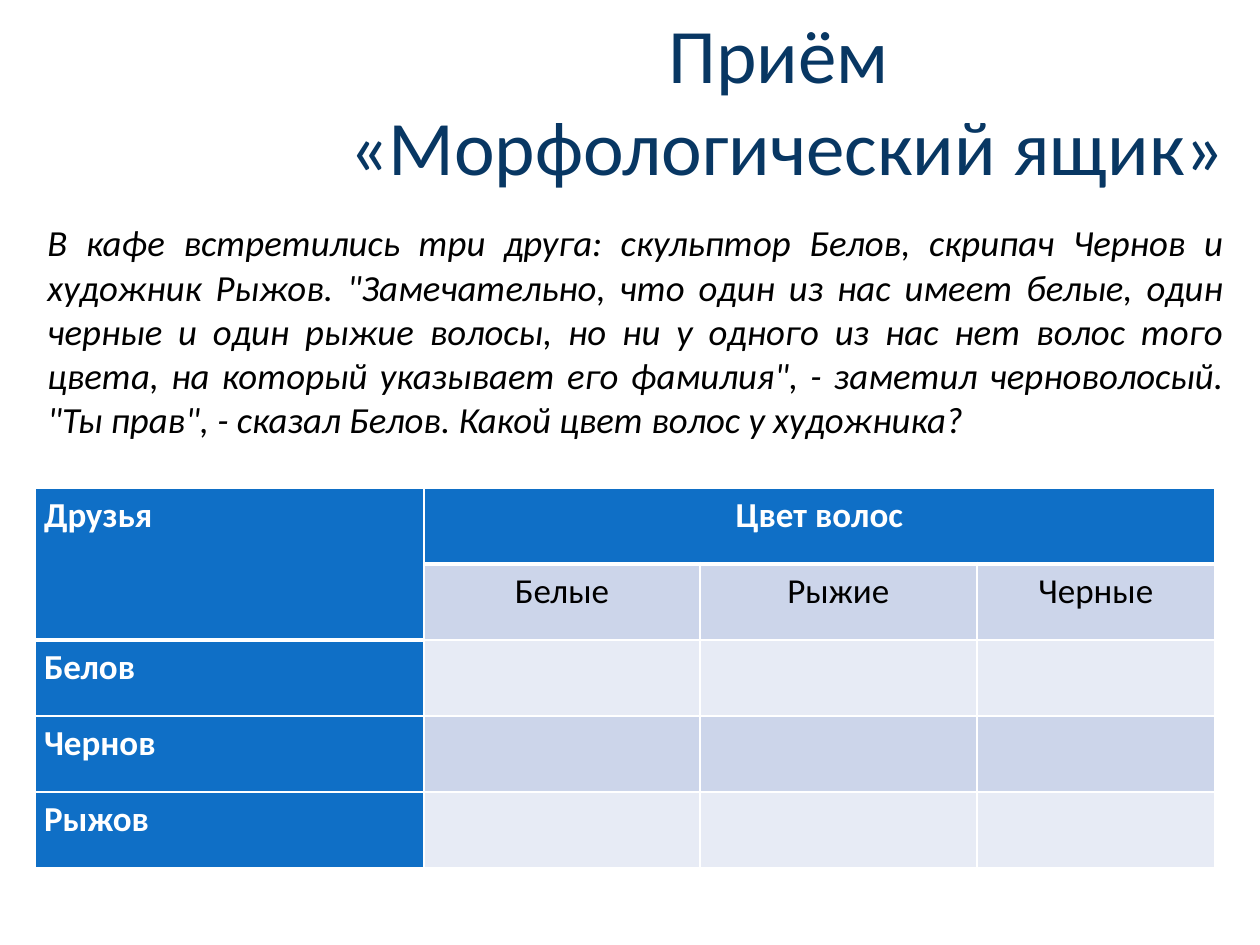
import pptx
import pptx.dml.color
import pptx.enum.text
import pptx.oxml
import pptx.oxml.ns
import pptx.util

ALIGN = pptx.enum.text.PP_ALIGN
WHITE, BLACK, NAVY, BLUE = "FFFFFF", "000000", "083763", "0F6FC6"
BANDS = ("E7EBF5", "CCD5EA")


def px(n):
    return pptx.util.Emu(round(n * 914400 / 126))


def rgb(value):
    return pptx.dml.color.RGBColor.from_string(value)


class Deck:
    font = "Calibri"

    def __init__(self, width, height):
        self.prs = pptx.Presentation()
        self.prs.slide_width, self.prs.slide_height = px(width), px(height)

    def add_slide(self):
        self.s = self.prs.slides.add_slide(self.prs.slide_layouts[5])

    def style(self, p, size, color, align, bold=False, italic=False):
        p.alignment = align
        p.font.name, p.font.size = self.font, pptx.util.Pt(size)
        p.font.bold, p.font.italic = bold, italic
        p.font.color.rgb = rgb(color)

    def title(self, lines, x, y, w, h):
        sp = self.s.shapes.title
        sp.left, sp.top, sp.width, sp.height = px(x), px(y), px(w), px(h)
        tf = sp.text_frame
        tf.text = "\n".join(lines)
        tf.word_wrap = False
        tf.auto_size = pptx.enum.text.MSO_AUTO_SIZE.SHAPE_TO_FIT_TEXT
        tf.vertical_anchor = pptx.enum.text.MSO_ANCHOR.MIDDLE
        for p in tf.paragraphs:
            self.style(p, 44, NAVY, ALIGN.CENTER)

    def text(self, text, x, y, w, h):
        tf = self.s.shapes.add_textbox(px(x), px(y), px(w), px(h)).text_frame
        tf.word_wrap = True
        tf.auto_size = pptx.enum.text.MSO_AUTO_SIZE.SHAPE_TO_FIT_TEXT
        tf.text = text
        self.style(tf.paragraphs[0], 21, BLACK, ALIGN.JUSTIFY, italic=True)

    def border(self, cell, side, points):
        ln = pptx.oxml.parse_xml(
            f'<a:{side} {pptx.oxml.ns.nsdecls("a")} w="{points * 12700}">'
            f'<a:solidFill><a:srgbClr val="{WHITE}"/></a:solidFill></a:{side}>')
        cell._tc.get_or_add_tcPr().append(ln)

    def cell(self, cell, text, fill, bold, align, top, bottom):
        for side, points in (("lnL", 1), ("lnR", 1), ("lnT", top), ("lnB", bottom)):
            self.border(cell, side, points)
        cell.fill.solid()
        cell.fill.fore_color.rgb = rgb(fill)
        cell.margin_left = cell.margin_right = px(9)
        cell.margin_top = cell.margin_bottom = 0
        if text:
            cell.text = text
            p = cell.text_frame.paragraphs[0]
            p.line_spacing, p.space_after = 1.15, pptx.util.Pt(8)
            self.style(p, 20, WHITE if bold else BLACK, align, bold)

    def table(self, rows, x, y, widths, row_height):
        frame = self.s.shapes.add_table(
            len(rows), len(widths), px(x), px(y),
            px(sum(widths)), px(row_height * len(rows)))
        table = frame.table
        table.first_col = True
        for column, width in zip(table.columns, widths):
            column.width = px(width)
        for r, row in enumerate(rows):
            table.rows[r].height = px(row_height)
            for c, text in enumerate(row):
                heading = r == 0 or c == 0
                header_end = 1 if c == 0 else 0
                self.cell(
                    table.cell(r, c), text,
                    BLUE if heading else BANDS[r % 2], heading,
                    ALIGN.LEFT if c == 0 else ALIGN.CENTER,
                    top=3 if r == header_end + 1 else 1,
                    bottom=3 if r == header_end else 1)
        table.cell(0, 0).merge(table.cell(1, 0))
        table.cell(0, 1).merge(table.cell(0, len(widths) - 1))


def main():
    deck = Deck(1260, 945)
    deck.add_slide()
    deck.table(
        [["Друзья", "Цвет волос", "", ""],
         ["", "Белые", "Рыжие", "Черные"]]
        + [[name, "", "", ""] for name in ("Белов", "Чернов", "Рыжов")],
        35, 488, [389, 276, 277, 238], 76)
    deck.title(["Приём ", "«Морфологический ящик»"], 317, -1, 941, 199)
    deck.text(
        "В кафе встретились три друга: скульптор Белов, скрипач Чернов и "
        "художник Рыжов. \"Замечательно, что один из нас имеет белые, один "
        "черные и один рыжие волосы, но ни у одного из нас нет волос того "
        "цвета, на который указывает его фамилия\", - заметил черноволосый. "
        "\"Ты прав\", - сказал Белов. Какой цвет волос у художника? ",
        35, 214, 1201, 273)
    deck.prs.save("out.pptx")


if __name__ == "__main__":
    main()
